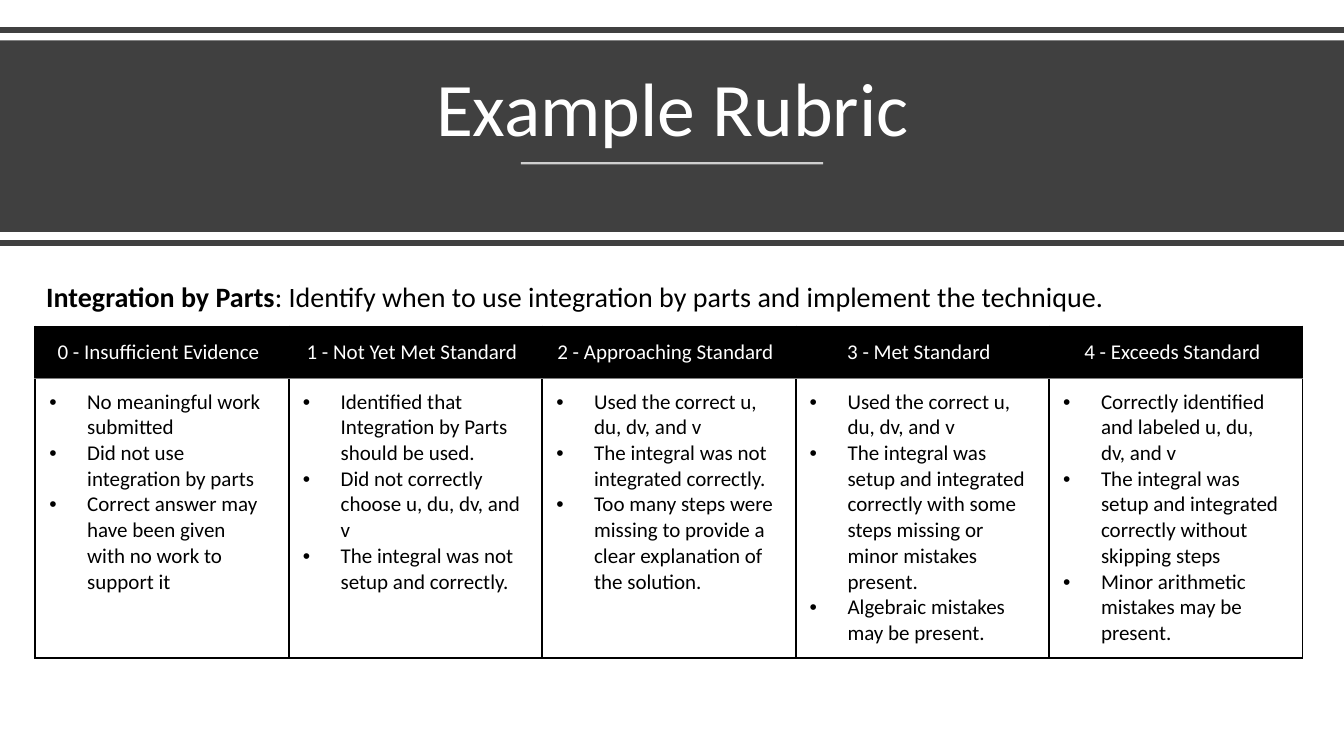
from lxml import etree
from pptx import Presentation
from pptx import util as u
from pptx.dml.color import RGBColor
from pptx.enum import shapes, text
from pptx.oxml.ns import qn

TITLE = "Example Rubric"
SKILL = "Integration by Parts"
SKILL_DETAIL = ": Identify when to use integration by parts and implement the technique."
RUBRIC = [
    ("0 - Insufficient Evidence", [
        "No meaningful work submitted",
        "Did not use integration by parts",
        "Correct answer may have been given with no work to support it"]),
    ("1 - Not Yet Met Standard", [
        "Identified that Integration by Parts should be used.",
        "Did not correctly choose u, du, dv, and v",
        "The integral was not setup and correctly."]),
    ("2 - Approaching Standard", [
        "Used the correct u, du, dv, and v",
        "The integral was not integrated correctly.",
        "Too many steps were missing to provide a clear explanation of the solution."]),
    ("3 - Met Standard", [
        "Used the correct u, du, dv, and v",
        "The integral was setup and integrated correctly with some steps missing "
        "or minor mistakes present.",
        "Algebraic mistakes may be present."]),
    ("4 - Exceeds Standard", [
        "Correctly identified and labeled u, du, dv, and v",
        "The integral was setup and integrated correctly without skipping steps",
        "Minor arithmetic mistakes may be present."]),
]

FONT = "Calibri"
BLACK = RGBColor(0x00, 0x00, 0x00)
WHITE = RGBColor(0xFF, 0xFF, 0xFF)
CHARCOAL = RGBColor(0x40, 0x40, 0x40)
GRAY = RGBColor(0x80, 0x80, 0x80)

WIDTH, HEIGHT = 13.33, 7.5
COLUMN = 2.514
HEADER_ROW, BODY_ROW = 0.51, 2.78
INDENT = 0.375
OUTER, INNER = (BLACK, 1.5), (GRAY, 0.5)

deck = Presentation()
deck.slide_width, deck.slide_height = u.Inches(WIDTH), u.Inches(HEIGHT)
slide = deck.slides.add_slide(deck.slide_layouts[6])


def box(*lengths):
    return [u.Inches(length) for length in lengths]


def add_rule(left, right, y, color, weight):
    rule = slide.shapes.add_connector(
        shapes.MSO_CONNECTOR.STRAIGHT, *box(left, y, right, y))
    rule.line.color.rgb = color
    rule.line.width = u.Pt(weight)
    etree.SubElement(rule.line._get_or_add_ln().getparent(), qn("a:effectLst"))
    return rule


def add_run(paragraph, words, size, color, bold=False):
    run = paragraph.add_run()
    run.text = words
    run.font.name, run.font.size, run.font.bold = FONT, u.Pt(size), bold
    run.font.color.rgb = color


def add_text_frame(area, anchor):
    frame = slide.shapes.add_textbox(*box(*area)).text_frame
    frame.word_wrap = True
    frame.vertical_anchor = anchor
    return frame


def add_bullet(paragraph):
    props = paragraph._p.get_or_add_pPr()
    props.set("marL", str(u.Inches(INDENT)))
    props.set("indent", str(-u.Inches(INDENT)))
    etree.SubElement(props, qn("a:buFont"), typeface="Arial")
    etree.SubElement(props, qn("a:buChar"), char="•")


def set_borders(cell, top, bottom):
    """Draw the four cell edges; the sides are always outer lines."""
    props = cell._tc.get_or_add_tcPr()
    edges = [("L", OUTER), ("R", OUTER), ("T", top), ("B", bottom)]
    for place, (side, (color, weight)) in enumerate(edges):
        edge = etree.Element(qn(f"a:ln{side}"), w=str(u.Pt(weight)))
        fill = etree.SubElement(edge, qn("a:solidFill"))
        etree.SubElement(fill, qn("a:srgbClr"), val=str(color))
        props.insert(place, edge)


def set_margins(cell):
    cell.margin_left, cell.margin_right = box(0.14, 0.21)
    cell.margin_top = cell.margin_bottom = u.Inches(0.11)


# Title band
add_rule(0, WIDTH, 0.3, CHARCOAL, 4)
band = slide.shapes.add_shape(shapes.MSO_SHAPE.RECTANGLE, *box(0, 0.4, WIDTH, 1.9))
band.shadow.inherit = False
band.fill.solid()
band.fill.fore_color.rgb = CHARCOAL
band.line.fill.background()

title = add_text_frame((0.58, 0.54, 12.18, 1.02), text.MSO_ANCHOR.BOTTOM).paragraphs[0]
title.alignment = text.PP_ALIGN.CENTER
title.line_spacing = 0.9
add_run(title, TITLE, 54, WHITE)

underline = add_rule(WIDTH / 2 - 1.5, WIDTH / 2 + 1.5, 1.62, WHITE, 1.5)
white = underline.line._get_or_add_ln().find(".//" + qn("a:srgbClr"))
etree.SubElement(white, qn("a:alpha"), val="75000")
add_rule(0, WIDTH, 2.41, CHARCOAL, 4)

# Rubric
rubric = slide.shapes.add_table(
    2, len(RUBRIC),
    *box(0.35, 3.24, COLUMN * len(RUBRIC), HEADER_ROW + BODY_ROW)).table
rubric.first_row = rubric.horz_banding = False
rubric.rows[0].height, rubric.rows[1].height = box(HEADER_ROW, BODY_ROW)

for column, (level, criteria) in enumerate(RUBRIC):
    rubric.columns[column].width = u.Inches(COLUMN)
    header, body = rubric.cell(0, column), rubric.cell(1, column)

    set_margins(header)
    header.vertical_anchor = text.MSO_ANCHOR.MIDDLE
    header.fill.solid()
    header.fill.fore_color.rgb = BLACK
    set_borders(header, OUTER, INNER)
    heading = header.text_frame.paragraphs[0]
    heading.alignment = text.PP_ALIGN.CENTER
    add_run(heading, level, 15, WHITE)

    set_margins(body)
    body.fill.background()
    set_borders(body, INNER, OUTER)
    for number, criterion in enumerate(criteria):
        frame = body.text_frame
        paragraph = frame.add_paragraph() if number else frame.paragraphs[0]
        add_bullet(paragraph)
        add_run(paragraph, criterion, 15, BLACK)

skill = add_text_frame((0.36, 2.72, 12.51, 0.44), text.MSO_ANCHOR.MIDDLE).paragraphs[0]
add_run(skill, SKILL, 20, BLACK, bold=True)
add_run(skill, SKILL_DETAIL, 20, BLACK)

deck.save("out.pptx")
